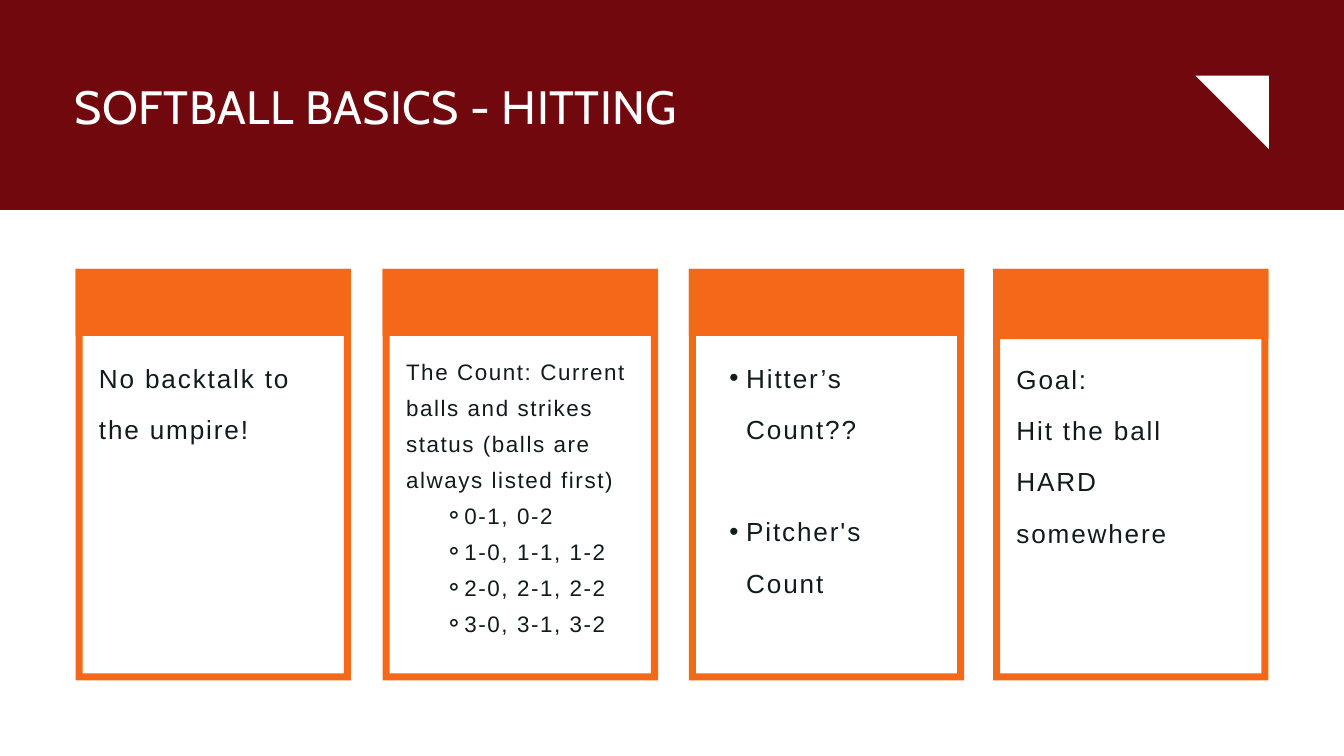
from dataclasses import dataclass
from typing import NamedTuple

from lxml.etree import SubElement
from pptx import Presentation
from pptx.dml.color import RGBColor
from pptx.enum.shapes import MSO_SHAPE
from pptx.enum.text import MSO_ANCHOR, MSO_AUTO_SIZE, PP_ALIGN
from pptx.oxml.ns import qn
from pptx.util import Pt


class Style(NamedTuple):
    face: str
    size: float
    line: float
    track: float
    color: RGBColor


@dataclass(frozen=True)
class Theme:
    band: RGBColor = RGBColor(0x70, 0x08, 0x0D)
    card: RGBColor = RGBColor(0xF4, 0x68, 0x19)
    white: RGBColor = RGBColor(0xFF, 0xFF, 0xFF)
    ink: RGBColor = RGBColor(0x11, 0x1B, 0x1E)

    @property
    def title(self) -> Style:
        return Style("Cabin", 50, 66.5, 0.5, self.white)

    @property
    def large(self) -> Style:
        return Style("Arial", 28, 54.9, 2, self.ink)

    @property
    def small(self) -> Style:
        return Style("Arial", 24, 38.6, 1.7, self.ink)


class Line(NamedTuple):
    text: str
    mark: str = ""
    left: float = 0
    hang: float = 0
    gap: float = 0


class Card(NamedTuple):
    left: float
    head: float
    top: float
    high: float
    style: Style
    lines: list[Line]


THEME = Theme()
CARD_TOP, CARD_WIDE, CARD_HIGH = 288, 295, 441
RIM, INSET, TEXT_WIDE = 7.5, 25, 245

CARDS = [
    Card(81, 72, 366.5, 99.5, THEME.large, [Line("No backtalk to the umpire!")]),
    Card(410, 72, 373.5, 340.5, THEME.small, [
        Line("The Count: Current balls and strikes status (balls are always listed first)"),
        *(Line(count, "⚬", 62.5, 21) for count in
          ("0-1, 0-2", "1-0, 1-1, 1-2", "2-0, 2-1, 2-2", "3-0, 3-1, 3-2")),
    ]),
    Card(738, 72, 366.5, 261.5, THEME.large, [
        Line("Hitter’s Count??", "•", 36.5, 18),
        Line("Pitcher's Count", "•", 36.5, 18, THEME.large.line),
    ]),
    Card(1064, 75.5, 368, 212.5, THEME.large, [
        Line("Goal:"), Line("Hit the ball HARD"), Line("somewhere"),
    ]),
]


def place(shape, left: float, top: float, wide: float, high: float) -> None:
    box = {"left": left, "top": top, "width": wide, "height": high}
    for name, value in box.items():
        setattr(shape, name, Pt(value))


def draw(slide, kind: MSO_SHAPE, box: tuple, color: RGBColor):
    shape = slide.shapes.add_shape(kind, *map(Pt, box))
    shape.shadow.inherit = False
    shape.fill.solid()
    shape.fill.fore_color.rgb = color
    shape.line.fill.background()
    return shape


def write(shape, lines: list[Line], style: Style) -> None:
    frame = shape.text_frame
    setup = {
        "margin_left": 0, "margin_top": 0, "margin_right": 0, "margin_bottom": 0,
        "word_wrap": True, "auto_size": MSO_AUTO_SIZE.NONE,
        "vertical_anchor": MSO_ANCHOR.TOP,
    }
    for name, value in setup.items():
        setattr(frame, name, value)
    for i, line in enumerate(lines):
        para = frame.add_paragraph() if i else frame.paragraphs[0]
        layout = {
            "alignment": PP_ALIGN.LEFT, "line_spacing": Pt(style.line),
            "space_before": Pt(line.gap), "space_after": Pt(0),
        }
        for name, value in layout.items():
            setattr(para, name, value)

        # Indent and bullet
        props = para._p.get_or_add_pPr()
        props.set("marL", str(Pt(line.left)))
        props.set("indent", str(-Pt(line.hang)))
        if line.mark:
            SubElement(props, qn("a:buFont"), typeface=style.face)
            SubElement(props, qn("a:buChar"), char=line.mark)
        else:
            SubElement(props, qn("a:buNone"))

        # Letters
        run = para.add_run()
        run.text = line.text
        font = {"name": style.face, "size": Pt(style.size), "bold": False}
        for name, value in font.items():
            setattr(run.font, name, value)
        run.font.color.rgb = style.color
        run._r.get_or_add_rPr().set("spc", str(round(style.track * 100)))


def raise_up(shape) -> None:
    """Bring a placeholder in front of the shapes drawn so far."""
    shape.element.getparent().append(shape.element)


def draw_card(slide, card: Card, body) -> None:
    frame = draw(slide, MSO_SHAPE.FRAME,
                 (card.left, CARD_TOP, CARD_WIDE, CARD_HIGH), THEME.card)
    frame.adjustments[0] = RIM / CARD_WIDE
    draw(slide, MSO_SHAPE.RECTANGLE,
         (card.left, CARD_TOP, CARD_WIDE, card.head), THEME.card)
    place(body, card.left + INSET, card.top, TEXT_WIDE, card.high)
    write(body, card.lines, card.style)
    raise_up(body)


def main() -> None:
    deck = Presentation()
    deck.slide_width, deck.slide_height = Pt(1440), Pt(810)
    # The comparison layout has a title and four bodies, one per card
    slide = deck.slides.add_slide(deck.slide_layouts[4])
    title, *bodies = list(slide.placeholders)[:5]

    # Title band, running past the slide edges
    draw(slide, MSO_SHAPE.RECTANGLE, (-48, -40.5, 1507, 265.5), THEME.band)
    place(title, 80, 76.5, 1140, 65)
    write(title, [Line("SOFTBALL BASICS - HITTING")], THEME.title)
    raise_up(title)

    # Corner mark
    corner = draw(slide, MSO_SHAPE.RIGHT_TRIANGLE, (1281, 81, 78.5, 78.5), THEME.white)
    corner.rotation = 180

    # Cards
    for card, body in zip(CARDS, bodies):
        draw_card(slide, card, body)

    deck.save("out.pptx")


if __name__ == "__main__":
    main()
